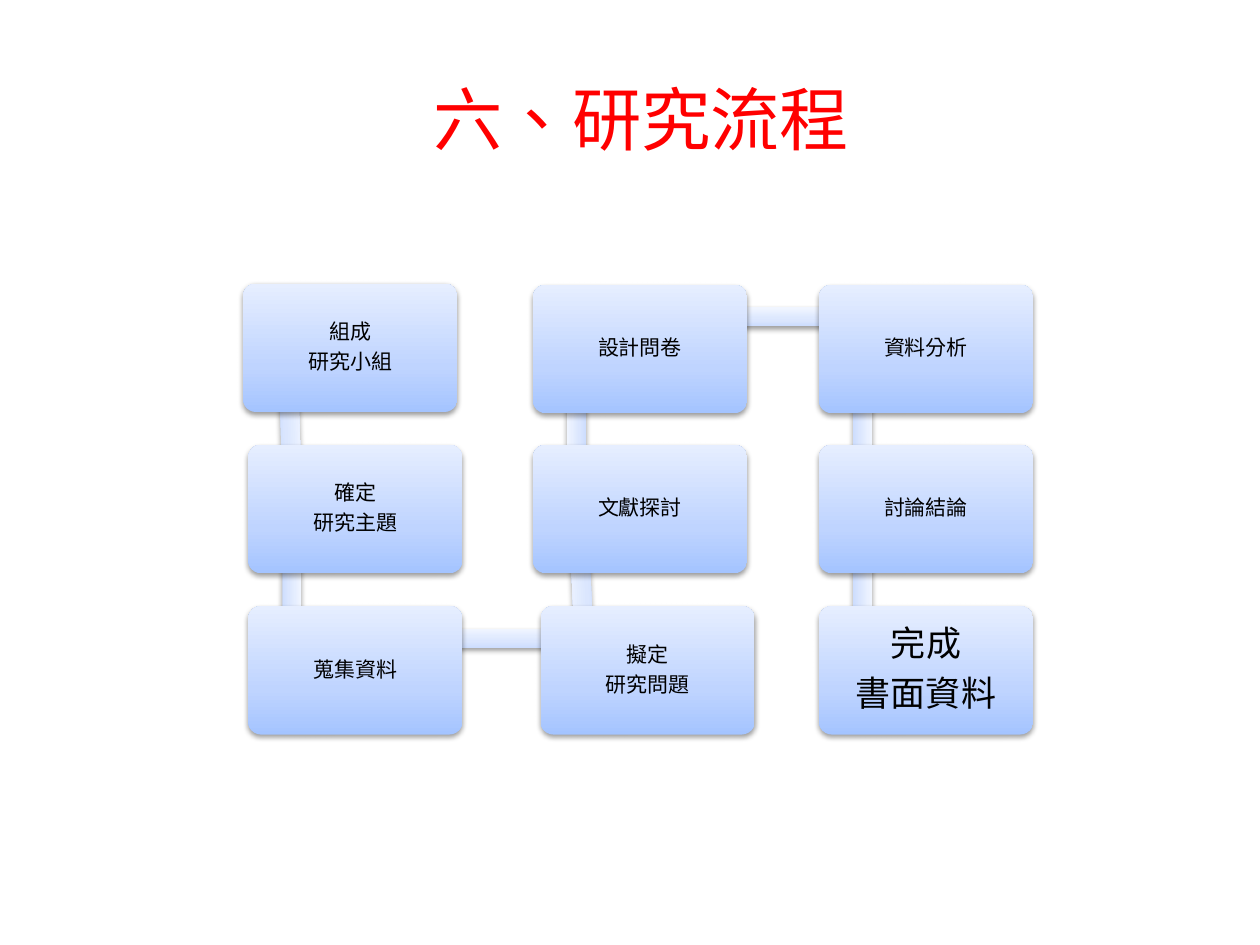
from math import atan2, degrees, hypot
from itertools import pairwise

from pptx import Presentation
from pptx.dml.color import RGBColor
from pptx.enum.shapes import MSO_SHAPE as Shape
from pptx.enum.text import MSO_ANCHOR as Anchor, PP_ALIGN as Align
from pptx.oxml import parse_xml
from pptx.oxml.ns import nsdecls
from pptx.util import Inches, Pt

RED = RGBColor(0xFF, 0x00, 0x00)
BLACK = RGBColor(0x00, 0x00, 0x00)
BOX_COLORS = (RGBColor(0xA4, 0xC4, 0xFF), RGBColor(0xBF, 0xD4, 0xFF), RGBColor(0xE6, 0xEE, 0xFF))
BAR_COLORS = (RGBColor(0xCD, 0xDD, 0xFE), RGBColor(0xDB, 0xE6, 0xFE), RGBColor(0xF0, 0xF5, 0xFF))
GRADIENT_STOPS = (0, 35, 100)

BOX_WIDTH, BOX_HEIGHT = 1.7, 1.02
BAR_THICKNESS = 0.15
BAR_OFFSET_X, BAR_OFFSET_Y = 0.345, 0.255  # bar end, from a box's top left
COLUMNS = (1.97, 4.23, 6.5)
ROWS = (2.26, 3.53, 4.81)

# Steps in order: lines of text, left, top
STEPS = [
    (("組成", "研究小組"), COLUMNS[0] - 0.04, ROWS[0] - 0.01),
    (("確定", "研究主題"), COLUMNS[0], ROWS[1]),
    (("蒐集資料",), COLUMNS[0], ROWS[2]),
    (("擬定", "研究問題"), COLUMNS[1] + 0.06, ROWS[2]),
    (("文獻探討",), COLUMNS[1], ROWS[1]),
    (("設計問卷",), COLUMNS[1], ROWS[0]),
    (("資料分析",), COLUMNS[2], ROWS[0]),
    (("討論結論",), COLUMNS[2], ROWS[1]),
    (("完成", "書面資料"), COLUMNS[2], ROWS[2]),
]


def write_text(shape, lines, *, size=12, font="Calibri", color=BLACK, inset=0.08,
               line_spacing=None, space_after=None):
    frame = shape.text_frame
    frame.word_wrap = True
    frame.vertical_anchor = Anchor.MIDDLE
    frame.margin_left = frame.margin_right = Inches(inset)
    frame.margin_top = frame.margin_bottom = Inches(inset)
    for index, line in enumerate(lines):
        paragraph = frame.add_paragraph() if index else frame.paragraphs[0]
        paragraph.alignment = Align.CENTER
        if line_spacing:
            paragraph.line_spacing = line_spacing
        if space_after:
            # Percentage spacing is only available in XML
            paragraph._p.get_or_add_pPr().append(parse_xml(
                f'<a:spcAft {nsdecls("a")}><a:spcPct val="{space_after * 1000}"/></a:spcAft>'))
        run = paragraph.add_run()
        run.text = line
        run.font.name = font
        run.font.size = Pt(size)
        run.font.color.rgb = color
        properties = run._r.get_or_add_rPr()
        properties.set("lang", "zh-TW")
        if font != "Calibri":
            properties.append(parse_xml(f'<a:ea {nsdecls("a")} typeface="{font}"/>'))


class FlowSlide:
    def __init__(self, slide):
        self.slide = slide

    def title(self, text):
        box = self.slide.shapes.add_textbox(Inches(0.59), Inches(0.66), Inches(9), Inches(0.55))
        write_text(box, [text], size=39.6, font="Noto Sans CJK SC", color=RED, inset=0)

    def block(self, kind, left, top, width, height, colors):
        """Add a borderless shape with a vertical gradient and a soft shadow."""
        shape = self.slide.shapes.add_shape(
            kind, Inches(left), Inches(top), Inches(width), Inches(height))
        stops = "".join(
            f'<a:gs pos="{stop * 1000}"><a:srgbClr val="{color}"/></a:gs>'
            for stop, color in zip(GRADIENT_STOPS, colors))
        properties = shape._element.spPr
        properties.append(parse_xml(
            f'<a:gradFill {nsdecls("a")} rotWithShape="1"><a:gsLst>{stops}</a:gsLst>'
            '<a:lin ang="16200000" scaled="0"/></a:gradFill>'))
        shape.line.fill.background()
        properties.append(parse_xml(
            f'<a:effectLst {nsdecls("a")}>'
            f'<a:outerShdw blurRad="{Pt(3.1)}" dist="{Pt(1.6)}" dir="5400000" rotWithShape="0">'
            '<a:srgbClr val="000000"><a:alpha val="38000"/></a:srgbClr>'
            '</a:outerShdw></a:effectLst>'))
        return shape

    def bar(self, start, end):
        """Add a bar joining the (left, top) positions of two boxes."""
        run, rise = end[0] - start[0], end[1] - start[1]
        length = hypot(run, rise)
        center_x = (start[0] + end[0]) / 2 + BAR_OFFSET_X
        center_y = (start[1] + end[1]) / 2 + BAR_OFFSET_Y
        bar = self.block(Shape.RECTANGLE, center_x - length / 2, center_y - BAR_THICKNESS / 2,
                         length, BAR_THICKNESS, BAR_COLORS)
        bar.rotation = degrees(atan2(rise, run)) % 360

    def step(self, lines, left, top, **text_format):
        box = self.block(Shape.ROUNDED_RECTANGLE, left, top, BOX_WIDTH, BOX_HEIGHT, BOX_COLORS)
        box.adjustments[0] = 0.1
        write_text(box, lines, line_spacing=0.9, space_after=35, **text_format)


def main():
    presentation = Presentation()
    presentation.slide_width, presentation.slide_height = Inches(10), Inches(7.5)
    flow = FlowSlide(presentation.slides.add_slide(presentation.slide_layouts[6]))

    # Heading
    flow.title("六、研究流程")

    # Bars lie behind the boxes
    for (_, *start), (_, *end) in pairwise(STEPS):
        flow.bar(start, end)

    # Steps, with larger text for the last
    for step in STEPS[:-1]:
        flow.step(*step)
    flow.step(*STEPS[-1], size=20, font="Noto Sans CJK TC", inset=0.11)

    presentation.save("out.pptx")


if __name__ == "__main__":
    main()
